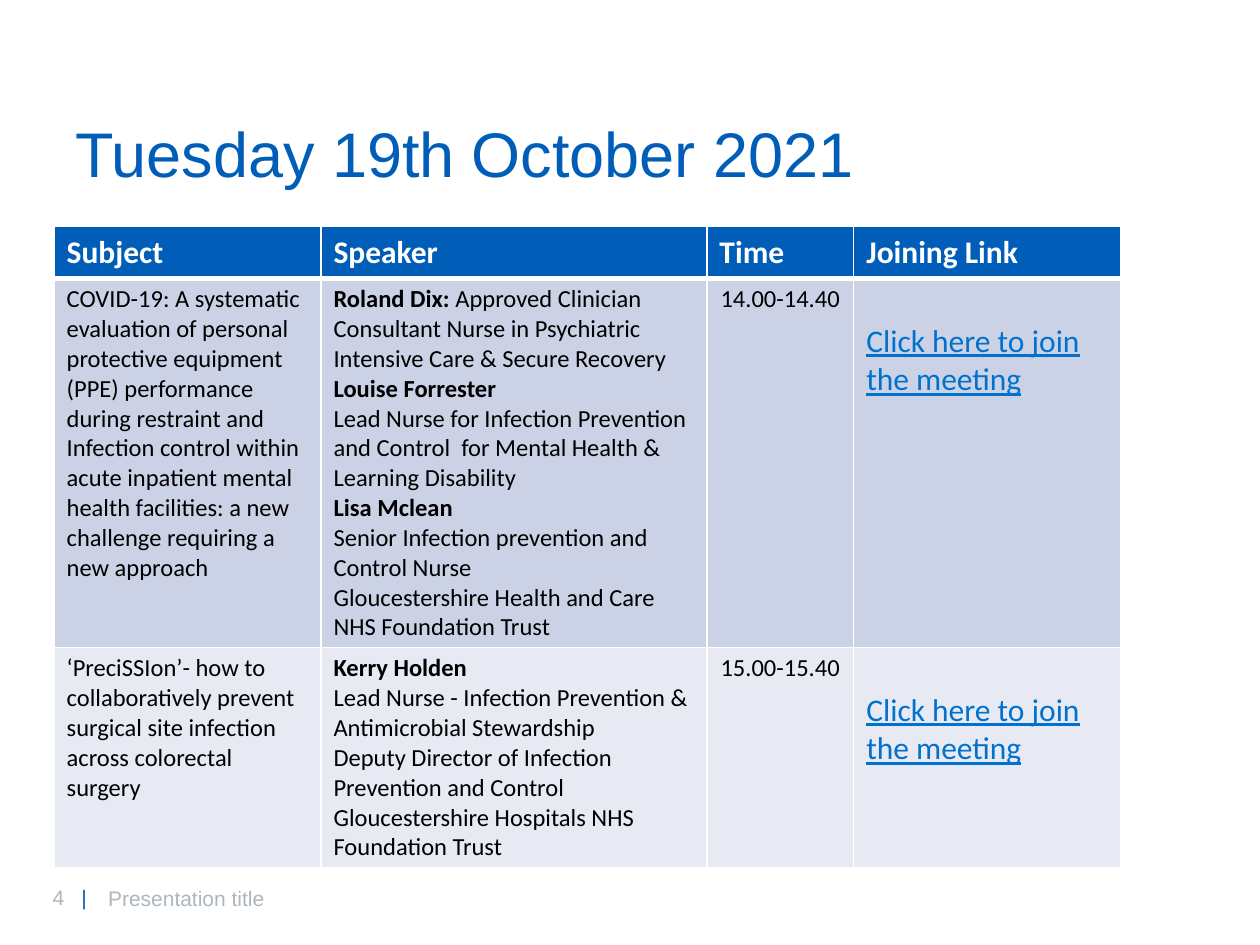
from lxml.etree import SubElement
from pptx import Presentation
from pptx.dml.color import RGBColor
from pptx.enum.text import MSO_ANCHOR, PP_ALIGN
from pptx.oxml.ns import qn
from pptx.util import Cm, Pt

BLUE = RGBColor(0x00, 0x5E, 0xB8)
LINK_BLUE = RGBColor(0x00, 0x72, 0xCE)
GREY = RGBColor(0xAD, 0xB6, 0xBE)
WHITE = RGBColor(0xFF, 0xFF, 0xFF)
BLACK = RGBColor(0x00, 0x00, 0x00)
ROW_FILLS = [BLUE, RGBColor(0xCC, 0xD2, 0xE6), RGBColor(0xE7, 0xEA, 0xF3)]

HEADINGS = ["Subject", "Speaker", "Time", "Joining Link"]
LINK = "Click here to join the meeting"
SESSIONS = [
    [
        [
            "COVID-19: A systematic evaluation of personal protective equipment (PPE) performance during restraint and",
            "Infection control within acute inpatient mental health facilities: a new challenge requiring a new approach",
        ],
        [
            ("Roland Dix: ", "Approved Clinician"),
            "Consultant Nurse in Psychiatric Intensive Care & Secure Recovery",
            ("Louise Forrester", ""),
            "Lead Nurse for Infection Prevention and Control  for Mental Health & Learning Disability",
            ("Lisa Mclean", ""),
            "Senior Infection prevention and Control Nurse",
            "Gloucestershire Health and Care NHS Foundation Trust",
        ],
        ["14.00-14.40"],
        [LINK],
    ],
    [
        ["‘PreciSSIon’- how to collaboratively prevent surgical site infection across colorectal surgery"],
        [
            ("Kerry Holden", ""),
            "Lead Nurse - Infection Prevention & Antimicrobial Stewardship",
            "Deputy Director of Infection Prevention and Control",
            "Gloucestershire Hospitals NHS Foundation Trust",
        ],
        ["15.00-15.40"],
        [LINK],
    ],
]


def style(paragraph, name, size, color):
    paragraph.font.name = name
    paragraph.font.size = Pt(size)
    paragraph.font.color.rgb = color
    for run in paragraph.runs:
        run.font.name = name
        run.font.size = Pt(size)
        run.font.color.rgb = color


def add_border(cell, side, width):
    line = SubElement(cell._tc.get_or_add_tcPr(), qn(f"a:{side}"), w=str(Pt(width)))
    SubElement(SubElement(line, qn("a:solidFill")), qn("a:srgbClr"), val=str(WHITE))


presentation = Presentation()
presentation.slide_width = Cm(25.4)
presentation.slide_height = Cm(19.05)
slide = presentation.slides.add_slide(presentation.slide_layouts[6])

page_number = slide.shapes.add_textbox(Cm(0.81), Cm(17.7), Cm(1.8), Cm(0.76)).text_frame
page_number.word_wrap = True
number_line = page_number.paragraphs[0]
tab_list = SubElement(number_line._p.get_or_add_pPr(), qn("a:tabLst"))
SubElement(tab_list, qn("a:tab"), pos=str(Cm(0.58)), algn="l")
for part in ["4\t", "|"]:
    number_line.add_run().text = part
style(number_line, "Arial", 12, GREY)
number_line.runs[1].font.color.rgb = BLUE

title = slide.shapes.add_textbox(Cm(1.27), Cm(2.36), Cm(18.24), Cm(1.7)).text_frame
title.word_wrap = True
title.text = "Tuesday 19th October 2021"
title.paragraphs[0].line_spacing = 0.9
style(title.paragraphs[0], "Arial", 36, BLUE)

footer = slide.shapes.add_textbox(Cm(1.93), Cm(17.6), Cm(15.9), Cm(1.02)).text_frame
footer.word_wrap = True
footer.vertical_anchor = MSO_ANCHOR.MIDDLE
footer.text = "Presentation title"
style(footer.paragraphs[0], "Arial", 12, GREY)

programme = slide.shapes.add_table(3, 4, Cm(1.09), Cm(4.57), Cm(21.5), Cm(12.93)).table
for column, width in zip(programme.columns, [5.38, 7.78, 2.96, 5.38]):
    column.width = Cm(width)
for row, height in zip(programme.rows, [1.04, 7.44, 4.45]):
    row.height = Cm(height)

rows = [[[heading] for heading in HEADINGS]] + SESSIONS
for row_index, row in enumerate(rows):
    for column_index, lines in enumerate(row):
        cell = programme.cell(row_index, column_index)
        is_header = row_index == 0
        is_link = lines == [LINK]
        for side in ["lnL", "lnR", "lnT", "lnB"]:
            heavy = (row_index, side) in [(0, "lnB"), (1, "lnT")]
            add_border(cell, side, 3 if heavy else 1)
        cell.fill.solid()
        cell.fill.fore_color.rgb = ROW_FILLS[row_index]
        if is_link:
            cell.margin_top = Cm(0.89)
        for line_index, line in enumerate(lines):
            frame = cell.text_frame
            paragraph = frame.paragraphs[0] if line_index == 0 else frame.add_paragraph()
            name, detail = line if isinstance(line, tuple) else ("", line)
            for text, bold in [(name, True), (detail, is_header)]:
                if text:
                    run = paragraph.add_run()
                    run.text = text
                    run.font.bold = bold
                    run.font.underline = is_link or None
            if HEADINGS[column_index] == "Time" and not is_header:
                paragraph.alignment = PP_ALIGN.CENTER
            color = WHITE if is_header else LINK_BLUE if is_link else BLACK
            style(paragraph, "Calibri", 18 if is_header or is_link else 14, color)

presentation.save("out.pptx")
